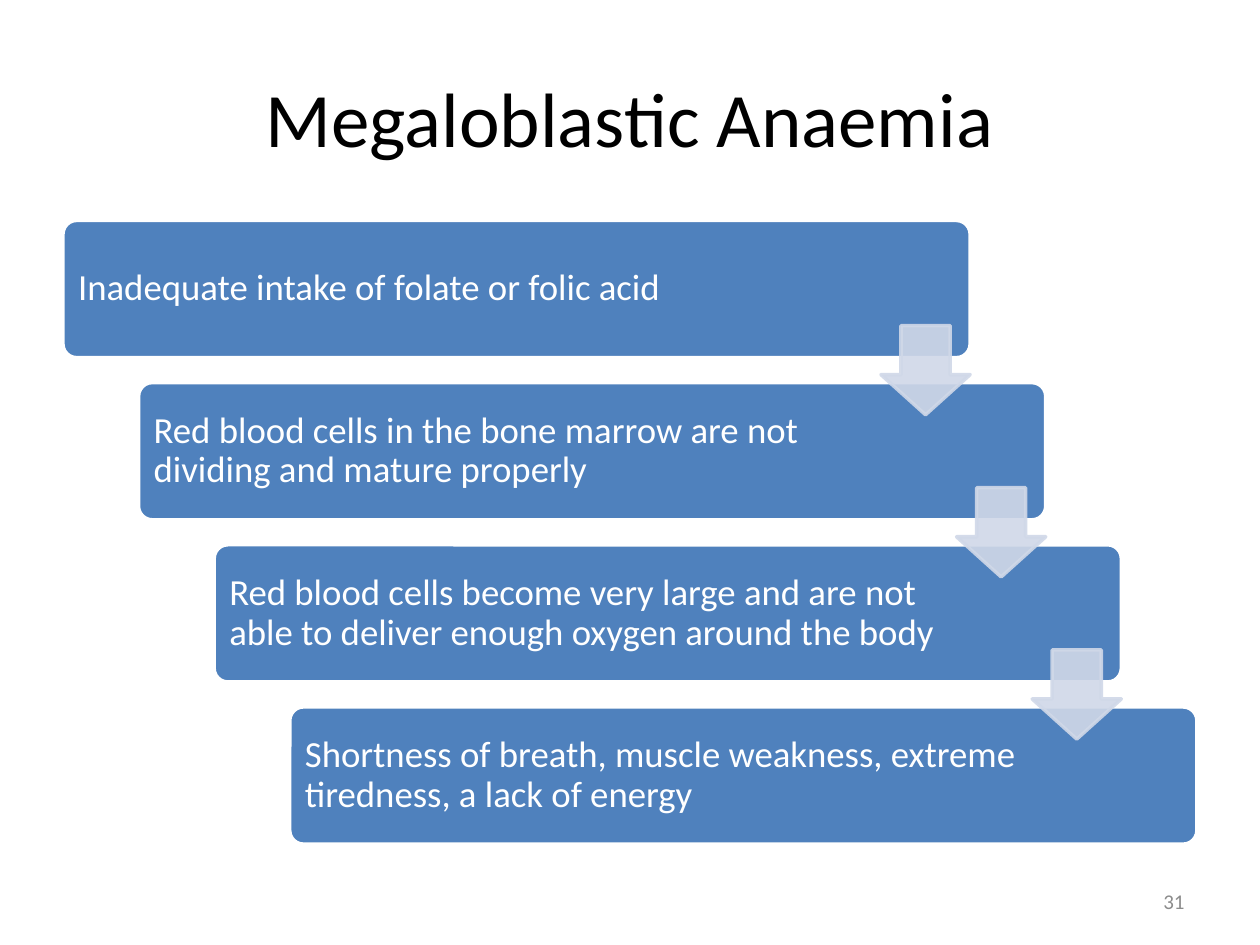
"""Build a slide of descending steps on the course of megaloblastic anaemia."""
import pptx
import pptx.dml.color
import pptx.enum.shapes
import pptx.enum.text
import pptx.oxml.ns
import pptx.util
from lxml import etree

TITLE = "Megaloblastic Anaemia"
STEPS = [
    "Inadequate intake of folate or folic acid",
    "Red blood cells in the bone marrow are not dividing and mature properly",
    "Red blood cells become very large and are not able to deliver enough oxygen around the body",
    "Shortness of breath, muscle weakness, extreme tiredness, a lack of energy",
]
PAGE_NUMBER = "31"

BLACK = pptx.dml.color.RGBColor(0x00, 0x00, 0x00)
WHITE = pptx.dml.color.RGBColor(0xFF, 0xFF, 0xFF)
BLUE = pptx.dml.color.RGBColor(0x4F, 0x81, 0xBD)
PALE_BLUE = pptx.dml.color.RGBColor(0xD0, 0xD8, 0xE8)
GREY = pptx.dml.color.RGBColor(0x8C, 0x8C, 0x8C)

SLIDE_W, SLIDE_H = 10, 7.5
MARGIN = 0.05 * SLIDE_W
CONTENT_W = SLIDE_W - 2 * MARGIN
STAIRS_TOP, STAIRS_H = 1.75, 4.95
STEP_W, STEP_H = 0.8 * CONTENT_W, 0.22 * STAIRS_H
SHIFT_X = (CONTENT_W - STEP_W) / (len(STEPS) - 1)
SHIFT_Y = (STAIRS_H - STEP_H) / (len(STEPS) - 1)
ARROW_SIZE = 0.65 * STEP_H
INSET = 0.03
FIRST_TEXT_W, TEXT_W = 5.93, 5.83

SHAPE = pptx.enum.shapes.MSO_SHAPE
ALIGN = pptx.enum.text.PP_ALIGN


def add_text(slide, text, box, size, color, align=ALIGN.LEFT, spacing=1.0, inset=(0.1, 0.05)):
    frame = slide.shapes.add_textbox(*map(pptx.util.Inches, box)).text_frame
    frame.word_wrap = True
    frame.vertical_anchor = pptx.enum.text.MSO_ANCHOR.MIDDLE
    frame.margin_left = frame.margin_right = pptx.util.Inches(inset[0])
    frame.margin_top = frame.margin_bottom = pptx.util.Inches(inset[1])
    paragraph = frame.paragraphs[0]
    paragraph.alignment = align
    paragraph.line_spacing = spacing
    run = paragraph.add_run()
    run.text = text
    run.font.name = "Calibri"
    run.font.size = pptx.util.Pt(size)
    run.font.color.rgb = color


def add_block(slide, preset, box, fill, line, adjustments, opacity=100):
    block = slide.shapes.add_shape(preset, *map(pptx.util.Inches, box))
    block.shadow.inherit = False
    for index, value in enumerate(adjustments):
        block.adjustments[index] = value
    block.fill.solid()
    block.fill.fore_color.rgb = fill
    block.line.color.rgb = line
    block.line.width = pptx.util.Pt(2)
    if opacity < 100:
        for color in block.element.spPr.iter(pptx.oxml.ns.qn("a:srgbClr")):
            etree.SubElement(color, pptx.oxml.ns.qn("a:alpha"), val=str(opacity * 1000))


def main():
    presentation = pptx.Presentation()
    presentation.slide_width = pptx.util.Inches(SLIDE_W)
    presentation.slide_height = pptx.util.Inches(SLIDE_H)
    slide = presentation.slides.add_slide(presentation.slide_layouts[6])

    add_text(slide, TITLE, (MARGIN, 0.3, CONTENT_W, 1.25), 44, BLACK, align=ALIGN.CENTER)

    corners = [(MARGIN + i * SHIFT_X, STAIRS_TOP + i * SHIFT_Y) for i in range(len(STEPS))]
    for i, (step, (left, top)) in enumerate(zip(STEPS, corners)):
        add_block(slide, SHAPE.ROUNDED_RECTANGLE, (left, top, STEP_W, STEP_H), BLUE, WHITE, [0.1])
        text_box = (left + INSET, top + INSET, TEXT_W if i else FIRST_TEXT_W, STEP_H - 2 * INSET)
        add_text(slide, step, text_box, 21, WHITE, spacing=0.9, inset=(0.09, 0.09))

    for left, top in corners[:-1]:
        arrow_left = left + STEP_W - ARROW_SIZE
        arrow_top = top + (SHIFT_Y + STEP_H - ARROW_SIZE) / 2
        add_block(slide, SHAPE.DOWN_ARROW, (arrow_left, arrow_top, ARROW_SIZE, ARROW_SIZE),
                  PALE_BLUE, PALE_BLUE, [0.55, 0.45], opacity=90)

    number_w = 2.33
    add_text(slide, PAGE_NUMBER, (SLIDE_W - MARGIN - number_w, 6.95, number_w, 0.4), 12, GREY,
             align=ALIGN.RIGHT)

    presentation.save("out.pptx")


if __name__ == "__main__":
    main()
